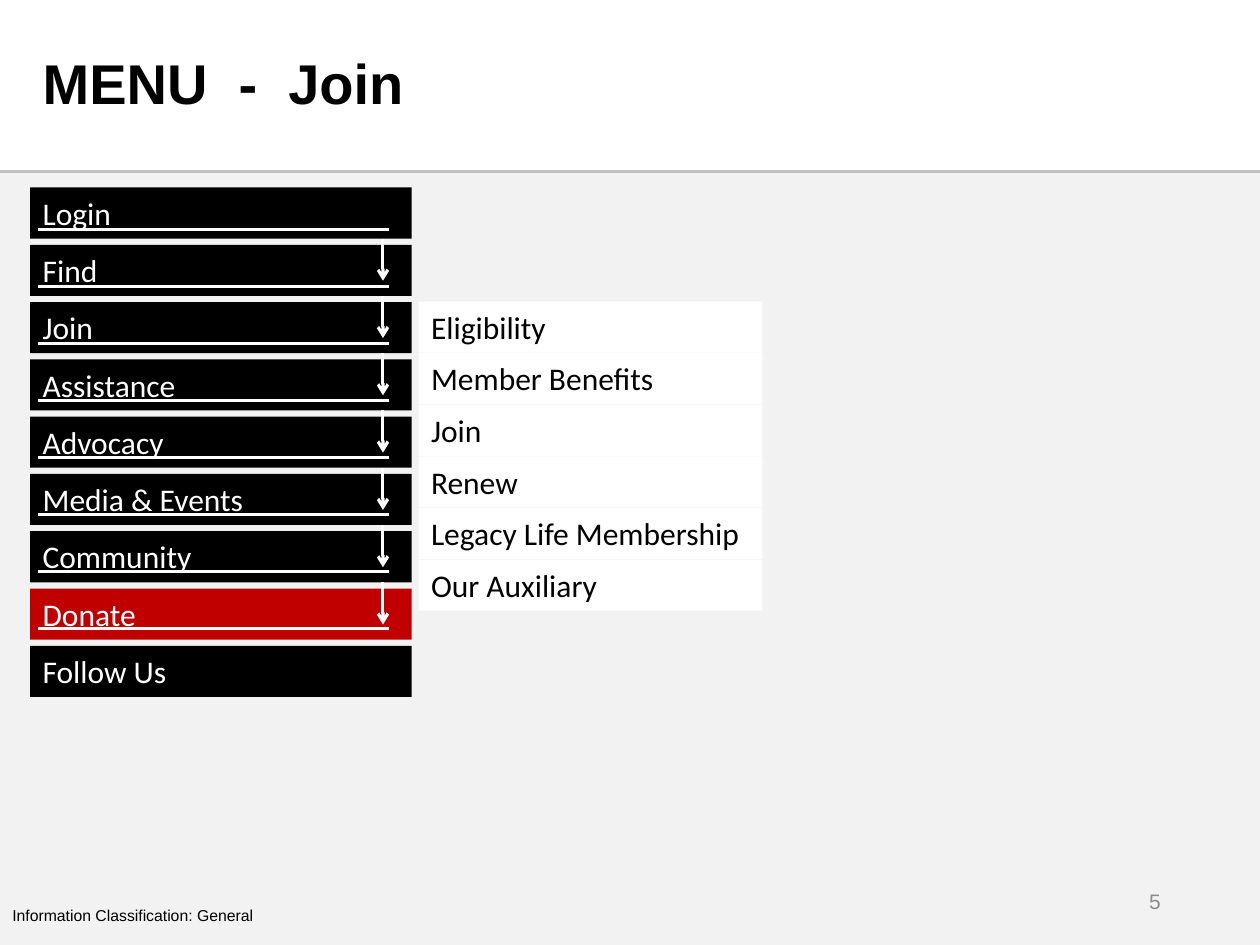
from dataclasses import dataclass

from lxml.etree import SubElement
from pptx import Presentation
from pptx.dml.color import RGBColor
from pptx.enum.shapes import MSO_CONNECTOR, MSO_SHAPE
from pptx.enum.text import MSO_ANCHOR, PP_ALIGN
from pptx.oxml.ns import qn
from pptx.util import Cm, Pt


@dataclass(frozen=True)
class Theme:
    black: str = "000000"
    white: str = "FFFFFF"
    red: str = "C00000"
    panel: str = "F2F2F2"
    rule: str = "BFBFBF"
    muted: str = "8C8C8C"
    heading_font: str = "Arial"
    menu_font: str = "Calibri"
    title_size: float = 32
    menu_size: float = 18
    number_size: float = 12
    footer_size: float = 9
    rule_width: float = 1.5
    menu_line_width: float = 1.75


@dataclass(frozen=True)
class Box:
    left: float
    top: float
    width: float
    height: float

    def lengths(self):
        return Cm(self.left), Cm(self.top), Cm(self.width), Cm(self.height)


THEME = Theme()
MENU = ["Login", "Find", "Join", "Assistance", "Advocacy", "Media & Events",
        "Community", "Donate", "Follow Us"]
HIGHLIGHT = "Donate"
SUBMENU = ["Eligibility", "Member Benefits", "Join", "Renew",
           "Legacy Life Membership", "Our Auxiliary"]
ROW_HEIGHT = 1.03


def write(shape, text, font, size, color, bold=False,
          align=PP_ALIGN.LEFT, anchor=MSO_ANCHOR.TOP):
    frame = shape.text_frame
    frame.word_wrap = True
    frame.vertical_anchor = anchor
    paragraph = frame.paragraphs[0]
    paragraph.text = text
    paragraph.alignment = align
    paragraph.font.name = font
    paragraph.font.size = Pt(size)
    paragraph.font.bold = bold
    paragraph.font.color.rgb = RGBColor.from_string(color)
    return paragraph


def add_rectangle(shapes, box, fill):
    shape = shapes.add_shape(MSO_SHAPE.RECTANGLE, *box.lengths())
    shape.shadow.inherit = False
    shape.fill.solid()
    shape.fill.fore_color.rgb = RGBColor.from_string(fill)
    shape.line.fill.background()
    return shape


def add_line(shapes, start, end, color, width, arrow=False):
    points = [Cm(value) for value in (*start, *end)]
    connector = shapes.add_connector(MSO_CONNECTOR.STRAIGHT, *points)
    connector.line.color.rgb = RGBColor.from_string(color)
    connector.line.width = Pt(width)
    if arrow:
        SubElement(connector.line._get_or_add_ln(), qn("a:tailEnd"), type="arrow")
    SubElement(connector._element.spPr, qn("a:effectLst"))


def add_rows(shapes, box, labels, fills, color):
    pitch = (box.height - ROW_HEIGHT) / (len(labels) - 1)
    for index, (label, fill) in enumerate(zip(labels, fills)):
        row = Box(box.left, box.top + index * pitch, box.width, ROW_HEIGHT)
        shape = add_rectangle(shapes, row, fill)
        write(shape, label, THEME.menu_font, THEME.menu_size, color)
    return pitch


def add_body(slide, box):
    add_rectangle(slide.shapes, box, THEME.panel)
    add_line(slide.shapes, (box.left, box.top), (box.left + box.width, box.top),
             THEME.rule, THEME.rule_width)


def add_title(slide, box):
    textbox = slide.shapes.add_textbox(*box.lengths())
    paragraph = write(textbox, "MENU  -  Join", THEME.heading_font, THEME.title_size,
                      THEME.black, bold=True, anchor=MSO_ANCHOR.MIDDLE)
    paragraph.line_spacing = 0.9


def add_footer(slide, box):
    label_box = Box(box.left, box.top + 0.49, box.width, 0.64)
    label = slide.shapes.add_textbox(*label_box.lengths())
    write(label, "Information Classification: General", THEME.heading_font,
          THEME.footer_size, THEME.black)
    number_box = Box(box.left + 17.93, box.top, 5.72, 1.02)
    number = slide.shapes.add_textbox(*number_box.lengths())
    write(number, "5", THEME.heading_font, THEME.number_size, THEME.muted,
          align=PP_ALIGN.RIGHT, anchor=MSO_ANCHOR.MIDDLE)


def add_menu(slide, box):
    shapes = slide.shapes.add_group_shape().shapes
    fills = [THEME.red if label == HIGHLIGHT else THEME.black for label in MENU]
    pitch = add_rows(shapes, box, MENU, fills, THEME.white)
    underline_pitch = 1.15
    arrow_x = box.left + 7.11
    for index in range(len(MENU) - 1):
        underline_y = box.top + 0.84 + index * underline_pitch
        add_line(shapes, (box.left + 0.16, underline_y),
                 (box.left + 7.24, underline_y), THEME.white, THEME.menu_line_width)
        arrow_y = box.top + ROW_HEIGHT + index * pitch
        if index < len(MENU) - 2:
            add_line(shapes, (arrow_x, arrow_y), (arrow_x, arrow_y + 0.85),
                     THEME.white, THEME.menu_line_width, arrow=True)


def add_submenu(slide, box):
    add_rows(slide.shapes, box, SUBMENU, [THEME.white] * len(SUBMENU), THEME.black)


def main():
    presentation = Presentation()
    presentation.slide_width = Cm(25.4)
    presentation.slide_height = Cm(19.05)
    slide = presentation.slides.add_slide(presentation.slide_layouts[6])
    add_body(slide, Box(0, 3.46, 25.4, 15.59))
    add_footer(slide, Box(0, 17.65, 25.4, 1.13))
    add_title(slide, Box(0.61, 0.38, 17.6, 2.72))
    add_menu(slide, Box(0.61, 3.78, 7.69, 10.27))
    add_submenu(slide, Box(8.44, 6.08, 6.93, 6.23))
    presentation.save("out.pptx")


if __name__ == "__main__":
    main()
